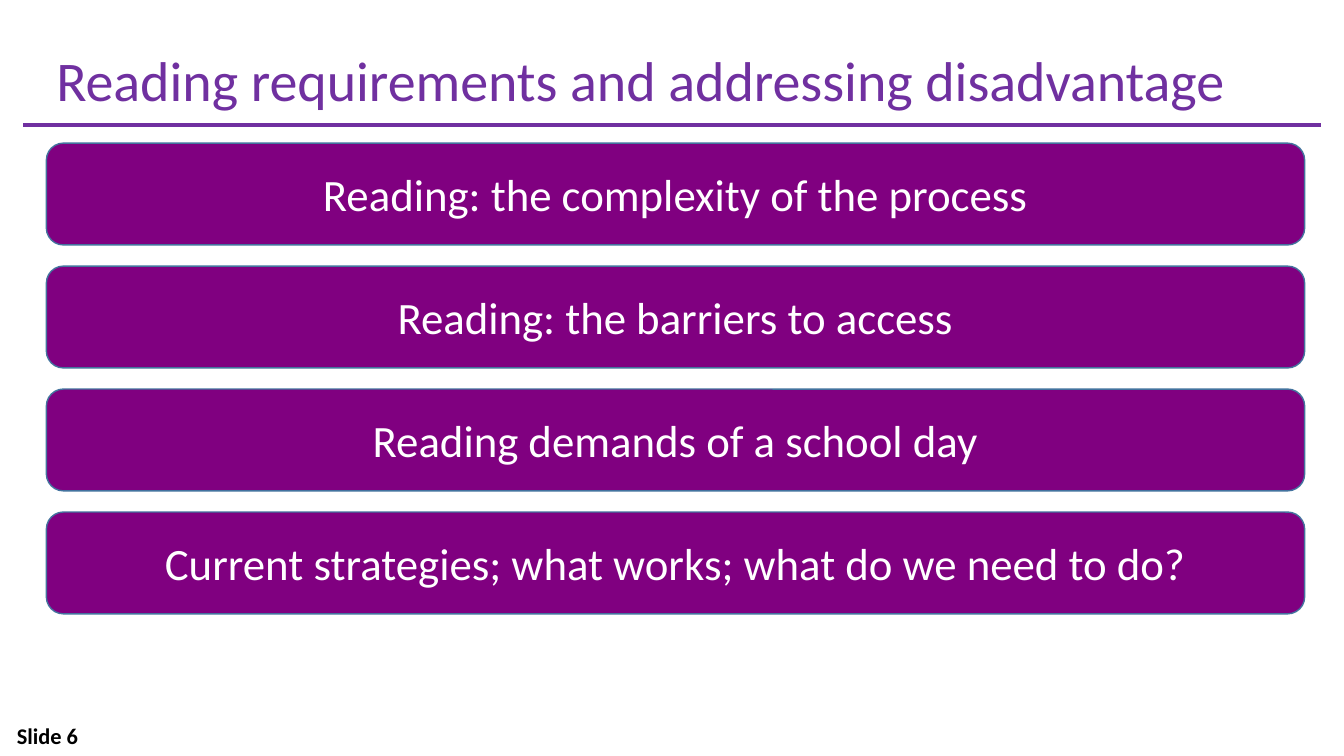
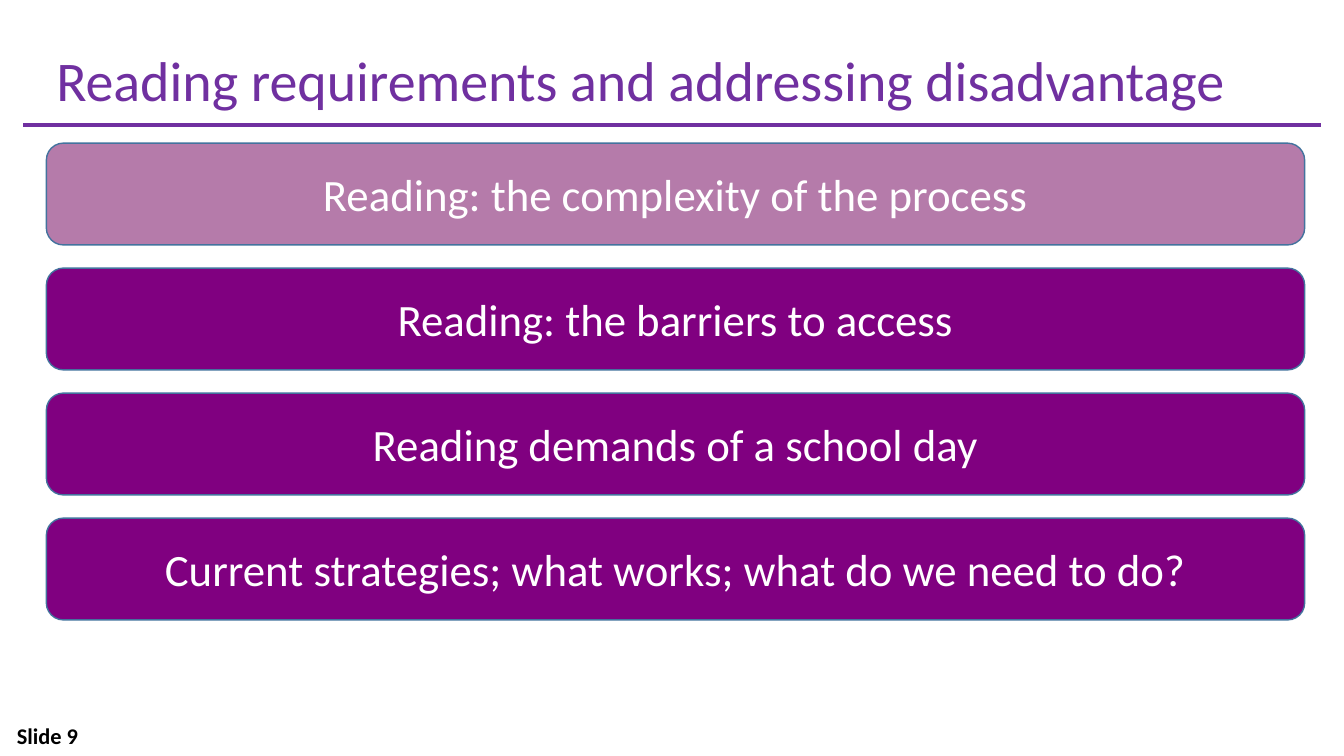
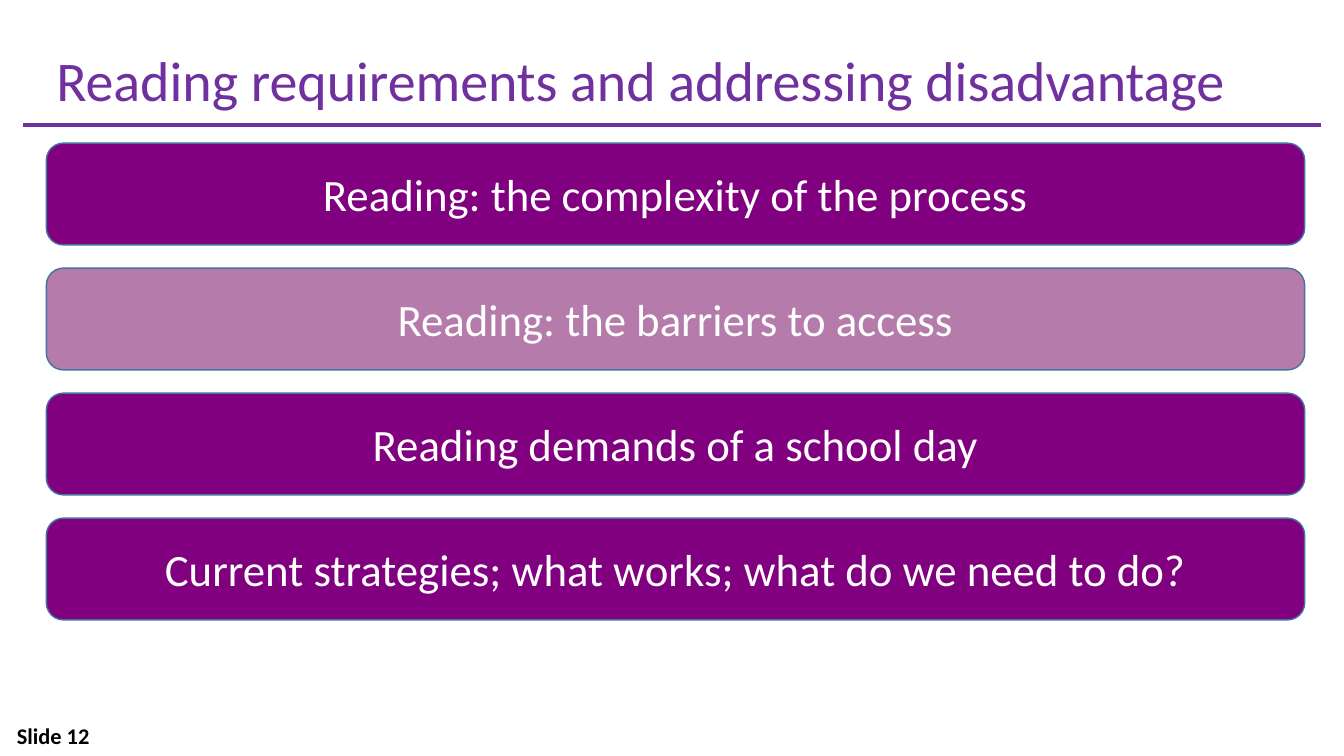
from lxml import etree
from pptx import Presentation
from pptx.dml.color import RGBColor
from pptx.enum.shapes import MSO_CONNECTOR, MSO_SHAPE
from pptx.enum.text import MSO_ANCHOR, PP_ALIGN
from pptx.oxml.ns import qn
from pptx.util import Inches, Pt

STRAIGHT = MSO_CONNECTOR.STRAIGHT
ROUNDED = MSO_SHAPE.ROUNDED_RECTANGLE
MIDDLE, TOP = MSO_ANCHOR.MIDDLE, MSO_ANCHOR.TOP
CENTER, LEFT = PP_ALIGN.CENTER, PP_ALIGN.LEFT

# Shared look
FONT = "Calibri"
VIOLET = RGBColor(0x70, 0x30, 0xA0)
PURPLE = RGBColor(0x80, 0x00, 0x80)
MAUVE = RGBColor(0xB5, 0x7B, 0xAA)
OUTLINE = RGBColor(0x43, 0x73, 0x9E)
WHITE = RGBColor(0xFF, 0xFF, 0xFF)
BLACK = RGBColor(0x00, 0x00, 0x00)

# Grid, in inches: one column of bars below the title rule
SLIDE_WIDTH, SLIDE_HEIGHT = 13.33, 7.5
COLUMN_LEFT, COLUMN_WIDTH = 0.46, 12.48
RULE_LEFT, RULE_RIGHT, RULE_TOP = 0.23, 13.1, 1.24
FIRST_BAR_TOP, BAR_HEIGHT = 1.42, 1.01
FOOTER_HEIGHT = 0.4

TITLE = "Reading requirements and addressing disadvantage"
TOPICS = [
    "Reading: the complexity of the process",
    "Reading: the barriers to access",
    "Reading demands of a school day",
    "Current strategies; what works; what do we need to do?",
]
# Slide number, distance between bar tops, index of the highlighted topic
AGENDAS = [(6, 1.22, None), (9, 1.24, 0), (12, 1.24, 1)]


def write_text(shape, text, size, color, align=LEFT, anchor=TOP, bold=False):
    frame = shape.text_frame
    frame.word_wrap = True
    frame.vertical_anchor = anchor
    paragraph = frame.paragraphs[0]
    paragraph.text = text
    paragraph.alignment = align
    font = paragraph.font
    font.name, font.size, font.bold = FONT, Pt(size), bold
    font.color.rgb = color


def add_text(slide, left, top, width, height, text, size, color, **style):
    box = slide.shapes.add_textbox(
        Inches(left), Inches(top), Inches(width), Inches(height))
    write_text(box, text, size, color, **style)


def add_title_rule(slide):
    rule = slide.shapes.add_connector(
        STRAIGHT, Inches(RULE_LEFT), Inches(RULE_TOP),
        Inches(RULE_RIGHT), Inches(RULE_TOP))
    rule.line.color.rgb = VIOLET
    rule.line.width = Pt(3)
    etree.SubElement(rule._element.spPr, qn("a:effectLst"))


def add_bar(slide, top, text, fill):
    bar = slide.shapes.add_shape(
        ROUNDED, Inches(COLUMN_LEFT), Inches(top),
        Inches(COLUMN_WIDTH), Inches(BAR_HEIGHT))
    bar.shadow.inherit = False
    bar.fill.solid()
    bar.fill.fore_color.rgb = fill
    bar.line.color.rgb = OUTLINE
    bar.line.width = Pt(1)
    write_text(bar, text, 32, WHITE, align=CENTER, anchor=MIDDLE)


def add_agenda(presentation, number, pitch, highlighted):
    slide = presentation.slides.add_slide(presentation.slide_layouts[6])
    # Footer, title and rule
    add_text(slide, 0.07, SLIDE_HEIGHT - FOOTER_HEIGHT, 3, FOOTER_HEIGHT,
             f"Slide {number}", 16, BLACK, anchor=MIDDLE, bold=True)
    add_title_rule(slide)
    add_text(slide, COLUMN_LEFT, 0.4, 12.41, 0.77, TITLE, 40, VIOLET)
    # Topic bars
    for row, topic in enumerate(TOPICS):
        fill = MAUVE if row == highlighted else PURPLE
        add_bar(slide, FIRST_BAR_TOP + row * pitch, topic, fill)


def main():
    presentation = Presentation()
    presentation.slide_width = Inches(SLIDE_WIDTH)
    presentation.slide_height = Inches(SLIDE_HEIGHT)
    for number, pitch, highlighted in AGENDAS:
        add_agenda(presentation, number, pitch, highlighted)
    presentation.save("out.pptx")


if __name__ == "__main__":
    main()
